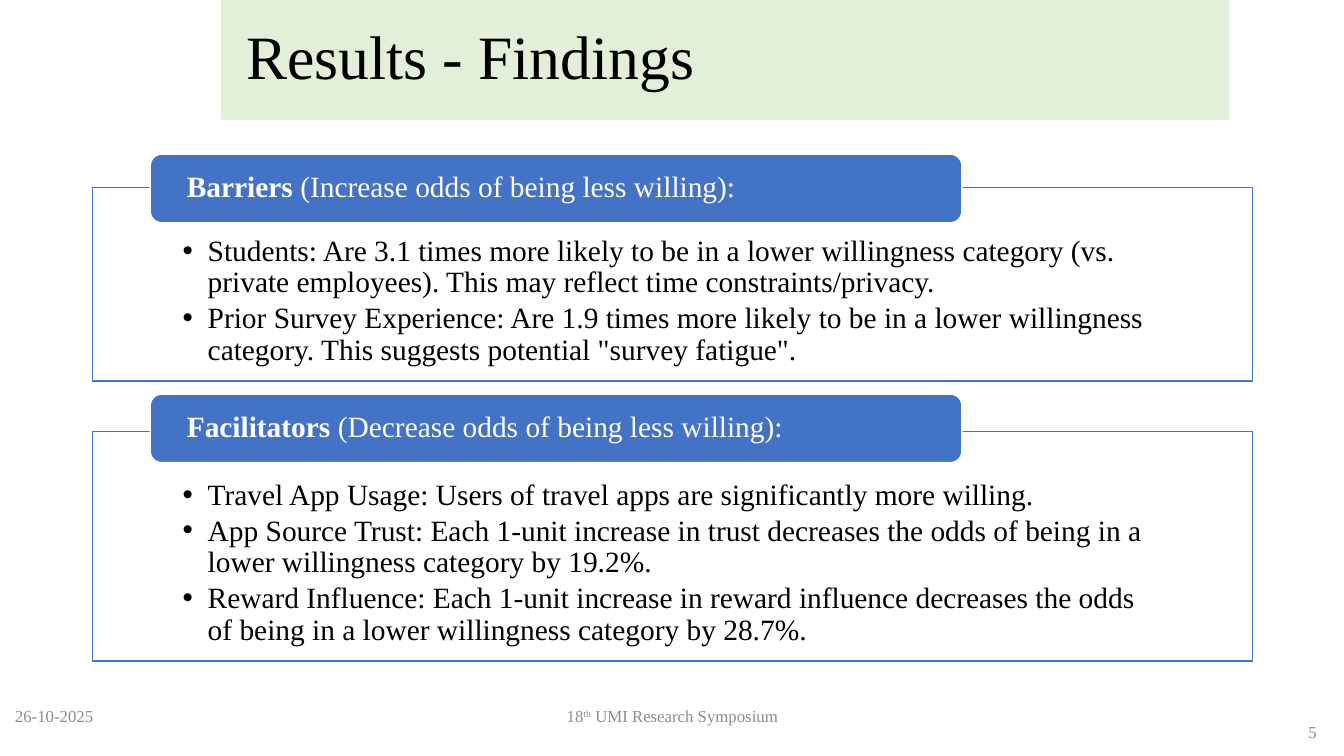
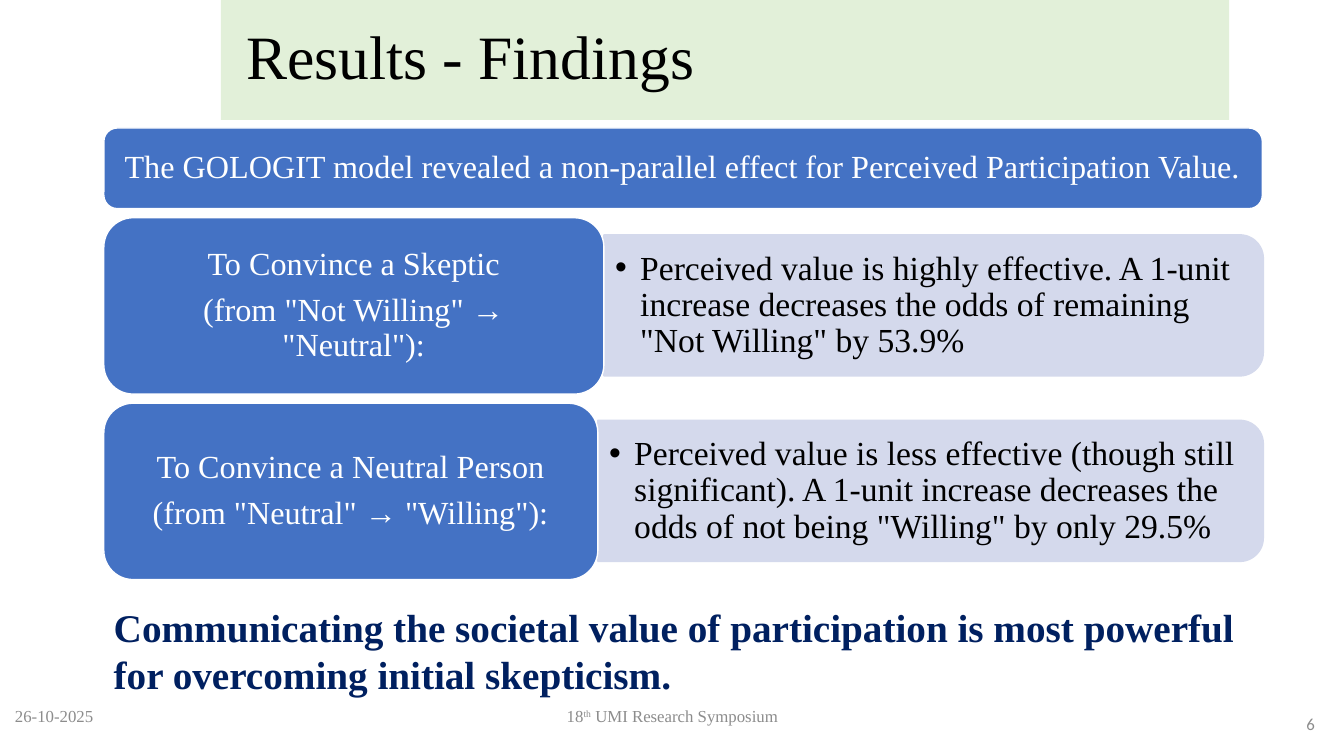
from pptx import Presentation
from pptx import util as u
from pptx.dml.color import RGBColor
from pptx.enum import shapes, text
from pptx.oxml.ns import qn
from lxml import etree

# Shared look; lengths in px, 100 to the inch
PX = 9144
SERIF, SANS = "Times New Roman", "Calibri"
BLUE = RGBColor(0x44, 0x72, 0xC4)
PALE_BLUE = RGBColor(0xD4, 0xD9, 0xEC)
PALE_GREEN = RGBColor(0xE2, 0xF0, 0xD9)
NAVY = RGBColor(0x00, 0x20, 0x60)
GREY = RGBColor(0x8C, 0x8C, 0x8C)
BLACK = RGBColor(0, 0, 0)
WHITE = RGBColor(0xFF, 0xFF, 0xFF)
LEFT, CENTER, RIGHT = text.PP_ALIGN.LEFT, text.PP_ALIGN.CENTER, text.PP_ALIGN.RIGHT
TOP, MIDDLE = text.MSO_ANCHOR.TOP, text.MSO_ANCHOR.MIDDLE

# Content: a paragraph is a string or a list of (text, style) runs
TITLE = "Results - Findings"
DATE = "26-10-2025"
EVENT = [("18", ""), ("th", "super"), (" UMI Research Symposium", "")]

FACTORS = [  # frame top, frame height, header top, header, bullets
    (186, 192, 153,
     [("Barriers ", "bold"), ("(Increase odds of being less willing):", "")],
     ["Students: Are 3.1 times more likely to be in a lower willingness category "
      "(vs. private employees). This may reflect time constraints/privacy.",
      "Prior Survey Experience: Are 1.9 times more likely to be in a lower "
      "willingness category. This suggests potential \"survey fatigue\"."]),
    (428, 228, 391,
     [("Facilitators", "bold"), (" (Decrease odds of being less willing):", "")],
     ["Travel App Usage: Users of travel apps are significantly more willing.",
      "App Source Trust: Each 1-unit increase in trust decreases the odds of "
      "being in a lower willingness category by 19.2%.",
      "Reward Influence: Each 1-unit increase in reward influence decreases the "
      "odds of being in a lower willingness category by 28.7%."]),
]

MODEL = "The GOLOGIT model revealed a non-parallel effect for Perceived Participation Value."
STEPS = [  # top, label width, label, effect
    (216, 496, ["To Convince a Skeptic", "(from \"Not Willing\" → \"Neutral\"):"],
     "Perceived value is highly effective. A 1-unit increase decreases the odds "
     "of remaining \"Not Willing\" by 53.9%"),
    (400, 490, ["To Convince a Neutral Person", "(from \"Neutral\" → \"Willing\"):"],
     "Perceived value is less effective (though still significant). A 1-unit "
     "increase decreases the odds of not being \"Willing\" by only 29.5%"),
]
MESSAGE = ("Communicating the societal value of participation is most powerful "
           "for overcoming initial skepticism.")


def place(s, x, y, w, h):
    s.left, s.top, s.width, s.height = (round(v * PX) for v in (x, y, w, h))


def paint(s, fill, line=None):
    s.fill.solid()
    s.fill.fore_color.rgb = fill
    if line is not None:
        s.line.color.rgb = line
        s.line.width = u.Pt(1)


def write(s, paras, size, color, align=LEFT, anchor=MIDDLE, margins=(10, 5, 10, 5),
          spacing=0.9, after=0, bullet=False, bold=False, font=SERIF):
    tf = s.text_frame
    tf.word_wrap = True
    tf.auto_size = text.MSO_AUTO_SIZE.NONE
    tf.vertical_anchor = anchor
    (tf.margin_left, tf.margin_top,
     tf.margin_right, tf.margin_bottom) = (m * PX for m in margins)
    for i, runs in enumerate(paras):
        p = tf.add_paragraph() if i else tf.paragraphs[0]
        p.alignment, p.line_spacing = align, spacing
        p.space_before, p.space_after = u.Pt(0), u.Pt(after)
        if bullet:
            pPr = p._p.get_or_add_pPr()
            pPr.set("marL", str(25 * PX))
            pPr.set("indent", str(-25 * PX))
            etree.SubElement(pPr, qn("a:buChar")).set("char", "•")
        for words, style in [(runs, "")] if isinstance(runs, str) else runs:
            r = p.add_run()
            r.text = words
            r.font.name, r.font.size = font, u.Pt(size)
            r.font.bold = bold or style == "bold"
            r.font.color.rgb = color
            if style == "super":
                r._r.get_or_add_rPr().set("baseline", "30000")


def add_box(slide, kind, box, fill, line):
    s = slide.shapes.add_shape(kind, 0, 0, 0, 0)
    place(s, *box)
    s.shadow.inherit = False
    paint(s, fill, line)
    return s


def add_pill(slide, box, paras, size, **look):
    s = add_box(slide, shapes.MSO_SHAPE.ROUNDED_RECTANGLE, box, BLUE, WHITE)
    write(s, paras, size, WHITE, after=8, **look)


def add_text(slide, box, paras, size, color, **look):
    s = slide.shapes.add_textbox(0, 0, 0, 0)
    place(s, *box)
    write(s, paras, size, color, **look)


def add_list(slide, s, box, paras, size, **look):
    slide.shapes._spTree.append(s._element)  # bring the list to the front
    place(s, *box)
    write(s, paras, size, BLACK, after=3, bullet=True, **look)


def add_slide(prs, number, number_at, number_font):
    slide = prs.slides.add_slide(prs.slide_layouts[3])
    title = slide.shapes.title
    place(title, 219, 0, 1000, 119)
    paint(title, PALE_GREEN)
    write(title, [TITLE], 44, BLACK, margins=(25, 5, 10, 5))
    for box, words, align, font in (
            ((5, 686, 387, 49), DATE, LEFT, SERIF),
            ((392, 686, 550, 49), EVENT, CENTER, SERIF),
            ((*number_at, 300, 49), number, RIGHT, number_font)):
        add_text(slide, box, [words], 12, GREY, align=align, spacing=1, font=font)
    return slide, list(slide.placeholders)[1:]


def factors_slide(prs):
    slide, lists = add_slide(prs, "5", (1016, 701), SERIF)
    for s, (top, height, head_top, header, bullets) in zip(lists, FACTORS):
        add_list(slide, s, (92, top, 1150, height), bullets, 21,
                 anchor=TOP, margins=(89, 48, 89, 16))
        paint(s, WHITE, BLUE)
        add_pill(slide, (149, head_top, 805, 68), [header], 21, margins=(33, 3, 33, 3))


def steps_slide(prs):
    slide, lists = add_slide(prs, "6", (1014, 694), SANS)
    left, right, bar_h = 103, 1253, 140
    add_pill(slide, (left, 127, 1149, 80), [MODEL], 23, align=CENTER,
             margins=(14, 9, 14, 9))
    for s, (top, label_w, label, effect) in zip(lists, STEPS):
        # Effect bar: top-rounded rectangle turned to the right
        x = left + label_w
        w = right - x
        shift = (w - bar_h) / 2
        bar = add_box(slide, shapes.MSO_SHAPE.ROUND_2_SAME_RECTANGLE,
                      (x + shift, top + 17 - shift, bar_h, w), PALE_BLUE, PALE_BLUE)
        bar.rotation = 90
        add_list(slide, s, (x + 1, top + 24, w - 6, 126), [effect], 24)
        add_pill(slide, (left, top, label_w, 175), label, 23, align=CENTER,
                 margins=(18, 13, 18, 13))
    add_text(slide, (103, 594, 1167, 104), [MESSAGE], 28, NAVY, anchor=TOP,
             spacing=1, bold=True)


def main():
    prs = Presentation()
    prs.slide_width, prs.slide_height = u.Inches(13.33), u.Inches(7.5)
    factors_slide(prs)
    steps_slide(prs)
    prs.save("out.pptx")


if __name__ == "__main__":
    main()
